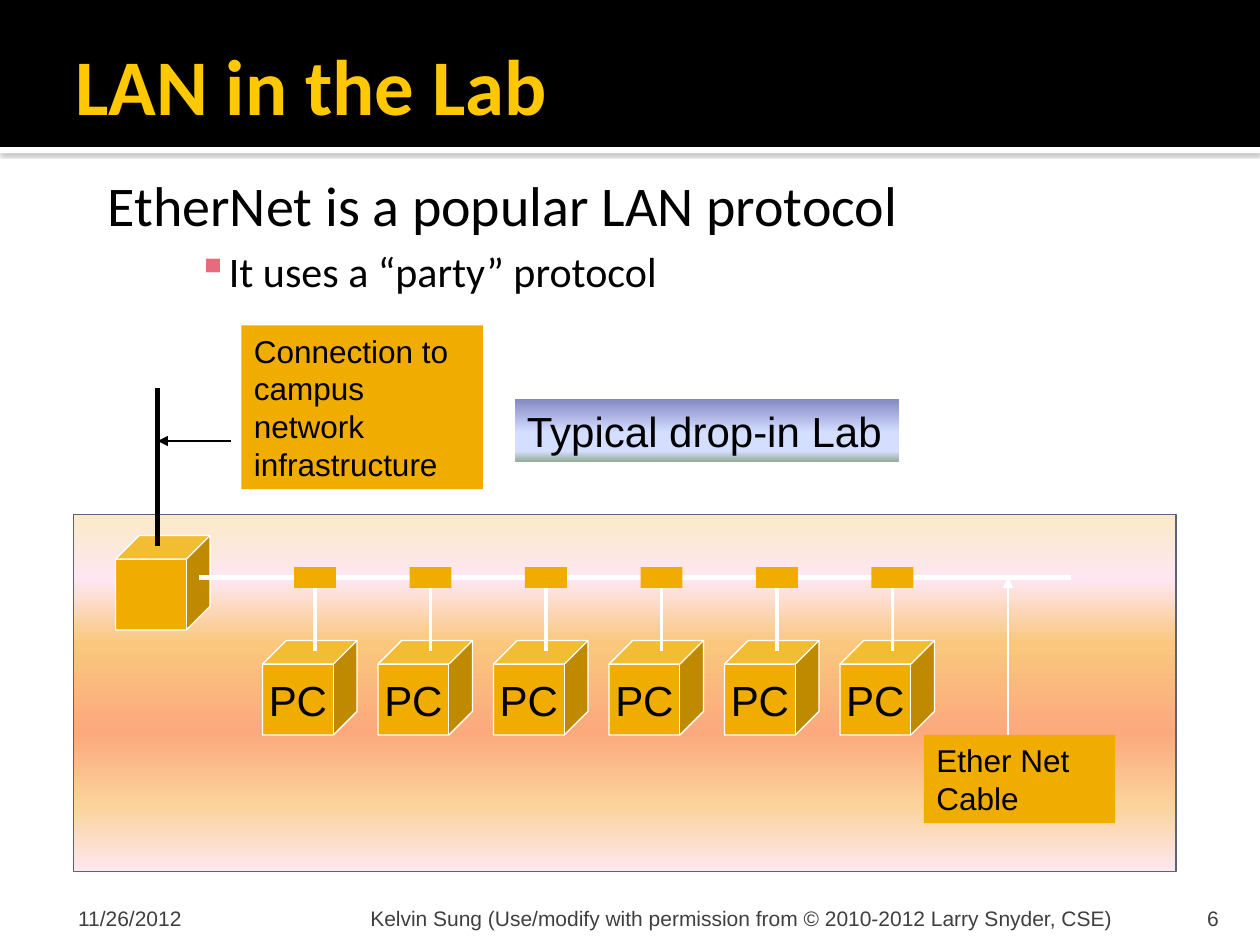
from lxml.etree import SubElement
from pptx import Presentation
from pptx.dml.color import RGBColor
from pptx.enum.shapes import MSO_CONNECTOR, MSO_SHAPE
from pptx.enum.text import MSO_ANCHOR, PP_ALIGN
from pptx.oxml.ns import qn
from pptx.util import Pt

BLACK = RGBColor(0x00, 0x00, 0x00)
WHITE = RGBColor(0xFF, 0xFF, 0xFF)
AMBER = RGBColor(0xF0, 0xAD, 0x00)
YELLOW = RGBColor(0xFF, 0xC8, 0x00)
SLATE = RGBColor(0x5A, 0x63, 0x78)
GRAY = RGBColor(0x3F, 0x3F, 0x3F)
PINK = RGBColor(0xE6, 0x6C, 0x7D)
SHADOW = RGBColor(0x80, 0x80, 0x80)
ROOM_STOPS = [(0, RGBColor(0xFB, 0xEA, 0xC7)), (18, RGBColor(0xFE, 0xE7, 0xF2)),
              (36, RGBColor(0xFA, 0xC7, 0x7D)), (61, RGBColor(0xFB, 0xA9, 0x7D)),
              (82, RGBColor(0xFB, 0xD4, 0x9C)), (100, RGBColor(0xFE, 0xE7, 0xF2))]
CAPTION_STOPS = [(0, RGBColor(0x84, 0x88, 0xC4)), (53, RGBColor(0xD4, 0xDE, 0xFF)),
                 (83, RGBColor(0xD4, 0xDE, 0xFF)), (100, RGBColor(0x96, 0xAB, 0x94))]

prs = Presentation()
prs.slide_width, prs.slide_height = Pt(720), Pt(540)
slide = prs.slides.add_slide(prs.slide_layouts[6])


def add_box(kind, left, top, width, height, fill, outline=None):
    """Add a shape filled with one colour or with a list of gradient stops."""
    box = slide.shapes.add_shape(kind, Pt(left), Pt(top), Pt(width), Pt(height))
    box.shadow.inherit = False
    if isinstance(fill, list):
        box.fill.gradient()
        box.fill.gradient_angle = 270
        stops = box._element.spPr.find(qn("a:gradFill")).find(qn("a:gsLst"))
        for old in list(stops):
            stops.remove(old)
        for percent, color in fill:
            stop = SubElement(stops, qn("a:gs"), pos=str(percent * 1000))
            SubElement(stop, qn("a:srgbClr"), val=str(color))
    else:
        box.fill.solid()
        box.fill.fore_color.rgb = fill
    if outline is None:
        box.line.fill.background()
    else:
        box.line.color.rgb = outline
        box.line.width = Pt(0.75)
    return box


def add_line(x1, y1, x2, y2, color, weight, arrow=False):
    """Add a straight line, with an arrowhead at its start if asked."""
    line = slide.shapes.add_connector(MSO_CONNECTOR.STRAIGHT, Pt(x1), Pt(y1), Pt(x2), Pt(y2))
    line.line.color.rgb = color
    line.line.width = Pt(weight)
    if arrow:
        SubElement(line.line._get_or_add_ln(), qn("a:headEnd"), type="triangle")
    SubElement(line._element.spPr, qn("a:effectLst"))


# Title band with a shadowed white edge
edge = add_box(MSO_SHAPE.RECTANGLE, 0, 84, 720, 3.6, WHITE)
shadow = SubElement(edge._element.spPr.find(qn("a:effectLst")), qn("a:outerShdw"),
                    blurRad=str(Pt(2.5)), dist=str(Pt(0.8)), dir="5400000",
                    algn="t", rotWithShape="0")
shadow_color = SubElement(shadow, qn("a:srgbClr"), val=str(SHADOW))
SubElement(shadow_color, qn("a:alpha"), val="60000")
add_box(MSO_SHAPE.RECTANGLE, 0, 0, 720, 84, BLACK)

# Title and footer: left, top, width, height, left and right inset, text, ...
footer = (7.2 * 70.8, 21.6)
for left, top, width, height, inset_left, inset_right, text, size, font, color, anchor, align in [
    (36, 12, 648, 72, 7.2, 3.6, "LAN in the Lab", 45, "Calibri", YELLOW,
     MSO_ANCHOR.MIDDLE, PP_ALIGN.LEFT),
    (36, 510, 168, 21.6, 8.64, 3.6, "11/26/2012", 12, "Arial", GRAY,
     MSO_ANCHOR.BOTTOM, PP_ALIGN.LEFT),
    (208, 510, 433.5, 21.6, 3.6, 3.6,
     "Kelvin Sung (Use/modify with permission from © 2010-2012 Larry Snyder, CSE)",
     12, "Arial", GRAY, MSO_ANCHOR.BOTTOM, PP_ALIGN.LEFT),
    (646, 510, 57.6, 21.6, 7.2, 7.2, "6", 12, "Arial", GRAY,
     MSO_ANCHOR.BOTTOM, PP_ALIGN.RIGHT),
]:
    frame = slide.shapes.add_textbox(Pt(left), Pt(top), Pt(width), Pt(height)).text_frame
    frame.word_wrap = True
    frame.vertical_anchor = anchor
    frame.margin_left, frame.margin_right = Pt(inset_left), Pt(inset_right)
    frame.margin_top = Pt(3.6)
    frame.margin_bottom = Pt(3.6 if anchor == MSO_ANCHOR.MIDDLE else 0)
    paragraph = frame.paragraphs[0]
    paragraph.text = text
    paragraph.alignment = align
    paragraph.font.size = Pt(size)
    paragraph.font.name = font
    paragraph.font.color.rgb = color
    paragraph.font.bold = font == "Calibri"

# Statement and its bullet
body = slide.shapes.add_textbox(Pt(48), Pt(90), Pt(624), Pt(348)).text_frame
body.word_wrap = True
body.margin_left, body.margin_top = Pt(4.32), Pt(7.2)
statement, detail = body.paragraphs[0], body.add_paragraph()
for paragraph, text, size, margin, indent in [
    (statement, "EtherNet is a popular LAN protocol", 32, 34.5, -25.2),
    (detail, "It uses a “party” protocol", 24, 78.5, -18),
]:
    paragraph.text = text
    paragraph.font.size = Pt(size)
    paragraph.font.name = "Calibri"
    paragraph.font.color.rgb = BLACK
    properties = paragraph._p.get_or_add_pPr()
    properties.set("marL", str(Pt(margin)))
    properties.set("indent", str(Pt(indent)))
detail.level = 1
detail.space_before = Pt(4.8)
detail_properties = detail._p.get_or_add_pPr()
bullet_color = SubElement(detail_properties, qn("a:buClr"))
SubElement(bullet_color, qn("a:srgbClr"), val=str(PINK))
SubElement(detail_properties, qn("a:buChar"), char="▪")
# Default run properties come last in the paragraph properties
detail_properties.append(detail_properties.find(qn("a:defRPr")))

# Lab room, hub and Ethernet cable
add_box(MSO_SHAPE.RECTANGLE, 42, 294, 630, 204, ROOM_STOPS, SLATE)
add_box(MSO_SHAPE.CUBE, 66, 306, 54, 54, AMBER, WHITE)
add_line(114, 330, 612, 330, WHITE, 3)

# Six PCs, each tapped into the cable
for index in range(6):
    left = 150 + 66 * index
    pc = add_box(MSO_SHAPE.CUBE, left, 366, 54, 54, AMBER, WHITE)
    pc.text_frame.word_wrap = False
    pc.text_frame.vertical_anchor = MSO_ANCHOR.MIDDLE
    pc_name = pc.text_frame.paragraphs[0]
    pc_name.text = "PC"
    pc_name.alignment = PP_ALIGN.CENTER
    pc_name.font.size = Pt(24)
    pc_name.font.name = "Arial"
    pc_name.font.color.rgb = BLACK
    add_box(MSO_SHAPE.RECTANGLE, left + 18, 324, 24, 12, AMBER)
    add_line(left + 30, 336, left + 30, 372, WHITE, 2.25)

# Campus uplink and label arrows
add_line(576, 330, 576, 426, WHITE, 0.75, arrow=True)
add_line(90, 312, 90, 222, BLACK, 3)
add_line(90, 252, 132, 252, BLACK, 0.75, arrow=True)

# Labels
for left, top, width, height, fill, text, size, wrap in [
    (138, 186, 138, 93.6, AMBER, "Connection to campus network infrastructure", 18, True),
    (528, 420, 109.2, 50.4, AMBER, "Ether Net Cable", 18, True),
    (294, 228, 219.6, 36, CAPTION_STOPS, "Typical drop-in Lab", 24, False),
]:
    label = add_box(MSO_SHAPE.RECTANGLE, left, top, width, height, fill).text_frame
    label.word_wrap = wrap
    label.vertical_anchor = MSO_ANCHOR.TOP
    paragraph = label.paragraphs[0]
    paragraph.text = text
    paragraph.alignment = PP_ALIGN.LEFT
    paragraph.font.size = Pt(size)
    paragraph.font.name = "Arial"
    paragraph.font.color.rgb = BLACK

prs.save("out.pptx")
